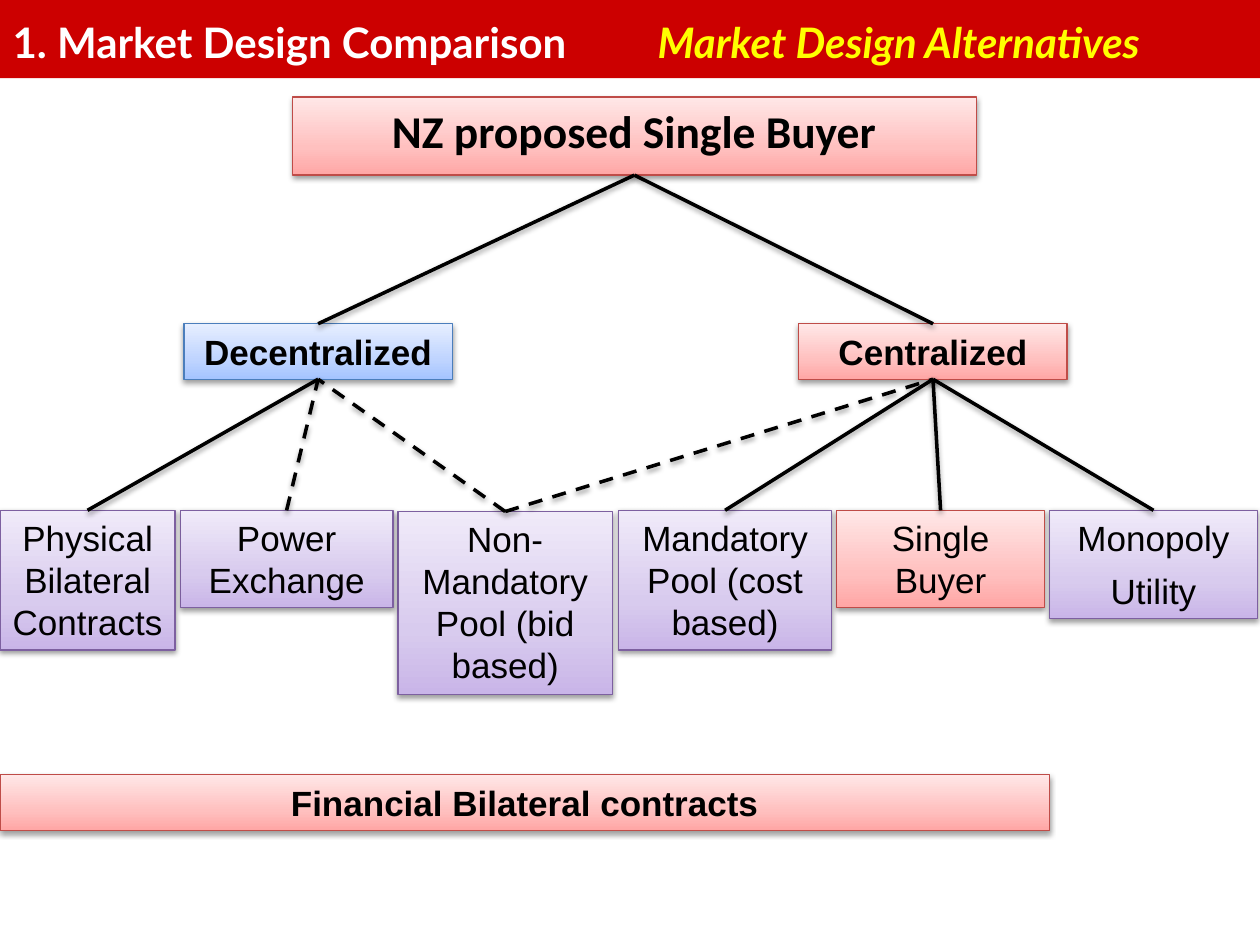
from dataclasses import dataclass

from lxml import etree
from pptx import Presentation
from pptx import util as u
from pptx.dml.color import RGBColor
from pptx.enum import dml, shapes, text
from pptx.oxml.ns import qn

BLACK = RGBColor(0x00, 0x00, 0x00)
WHITE = RGBColor(0xFF, 0xFF, 0xFF)
YELLOW = RGBColor(0xFF, 0xFF, 0x00)
HEADER_RED = RGBColor(0xCC, 0x00, 0x00)
TOP, BOTTOM = 0, 2  # connection sites of a rectangle


@dataclass(frozen=True)
class Theme:
    line: RGBColor
    stops: tuple[RGBColor, RGBColor, RGBColor]  # from bottom to top


RED = Theme(RGBColor(0xBF, 0x4C, 0x48), (
    RGBColor(0xFF, 0xA6, 0xA5), RGBColor(0xFF, 0xC0, 0xBF), RGBColor(0xFF, 0xE7, 0xE7)))
BLUE = Theme(RGBColor(0x4B, 0x7E, 0xBC), (
    RGBColor(0xA4, 0xC4, 0xFF), RGBColor(0xBF, 0xD4, 0xFF), RGBColor(0xE6, 0xEE, 0xFF)))
PURPLE = Theme(RGBColor(0x7D, 0x60, 0xA0), (
    RGBColor(0xC9, 0xB5, 0xE8), RGBColor(0xD8, 0xCB, 0xEE), RGBColor(0xF0, 0xEA, 0xF9)))


@dataclass(frozen=True)
class Box:
    name: str
    paragraphs: tuple[str, ...]
    left: float
    top: float
    width: float
    height: float
    theme: Theme = PURPLE
    bold: bool = False
    font: str = "Arial"
    size: int = 20
    space_before: int = 6


@dataclass(frozen=True)
class Branch:
    parent: str
    child: str
    dashed: bool = False


BOXES = [
    Box("proposal", ("NZ proposed Single Buyer",), 2.32, 0.77, 5.43, 0.62, RED, True,
        "Calibri", 26, 0),
    Box("decentralized", ("Decentralized",), 1.46, 2.57, 2.13, 0.44, BLUE, True),
    Box("centralized", ("Centralized",), 6.34, 2.57, 2.13, 0.44, RED, True),
    Box("monopoly", ("Monopoly", "Utility"), 8.33, 4.05, 1.65, 0.86),
    Box("single buyer", ("Single\nBuyer",), 6.64, 4.05, 1.65, 0.77, RED),
    Box("mandatory", ("Mandatory\nPool (cost based)",), 4.91, 4.05, 1.69, 1.11),
    Box("voluntary", ("Non- Mandatory\nPool (bid based)",), 3.16, 4.06, 1.7, 1.45),
    Box("exchange", ("Power\nExchange",), 1.43, 4.05, 1.69, 0.77),
    Box("physical", ("Physical\nBilateral\nContracts",), 0, 4.05, 1.39, 1.11),
    Box("financial", ("Financial Bilateral contracts",), 0, 6.15, 8.33, 0.44, RED, True),
]

BRANCHES = [
    Branch("proposal", "decentralized"),
    Branch("proposal", "centralized"),
    Branch("centralized", "monopoly"),
    Branch("centralized", "single buyer"),
    Branch("centralized", "mandatory"),
    Branch("centralized", "voluntary", True),
    Branch("decentralized", "voluntary", True),
    Branch("decentralized", "exchange", True),
    Branch("decentralized", "physical"),
]


def apply_format(target, values: dict) -> None:
    for attribute, value in values.items():
        setattr(target, attribute, value)


def add_node(parent, tag: str, **attributes):
    return etree.SubElement(parent, qn(tag), {k: str(v) for k, v in attributes.items()})


def add_shadow(shape) -> None:
    """Soft shadow below the shape; call after the line is set."""
    effects = add_node(shape._element.spPr, "a:effectLst")
    shadow = add_node(effects, "a:outerShdw", blurRad=40000, dist=20000,
                      dir=5400000, rotWithShape=0)
    color = add_node(shadow, "a:srgbClr", val=BLACK)
    add_node(color, "a:alpha", val=38000)


def fill_gradient(shape, theme: Theme) -> None:
    shape.fill.gradient()
    gradient = shape._element.spPr.find(qn("a:gradFill"))
    for child in list(gradient):
        gradient.remove(child)
    stops = add_node(gradient, "a:gsLst")
    for position, color in zip((0, 35, 100), theme.stops):
        add_node(add_node(stops, "a:gs", pos=position * 1000), "a:srgbClr", val=color)
    add_node(gradient, "a:lin", ang=270 * 60000, scaled=0)


def add_box(slide, box: Box):
    shape = slide.shapes.add_shape(
        shapes.MSO_SHAPE.RECTANGLE,
        *map(u.Inches, (box.left, box.top, box.width, box.height)))
    fill_gradient(shape, box.theme)
    shape.line.color.rgb = box.theme.line
    shape.line.width = u.Pt(0.75)
    add_shadow(shape)

    frame = shape.text_frame
    apply_format(frame, {"word_wrap": True, "vertical_anchor": text.MSO_ANCHOR.TOP,
                         "margin_left": u.Inches(0.08), "margin_right": u.Inches(0.08)})
    for index, wording in enumerate(box.paragraphs):
        paragraph = frame.add_paragraph() if index else frame.paragraphs[0]
        paragraph.text = wording.replace("\n", "\v")
        apply_format(paragraph, {"alignment": text.PP_ALIGN.CENTER,
                                 "space_before": u.Pt(box.space_before)})
        for run in paragraph.runs:
            apply_format(run.font, {"name": box.font, "size": u.Pt(box.size),
                                    "bold": box.bold})
            run.font.color.rgb = BLACK
    return shape


def add_branch(slide, parent, child, dashed: bool) -> None:
    connector = slide.shapes.add_connector(shapes.MSO_CONNECTOR.STRAIGHT, 0, 0, 0, 0)
    connector.begin_connect(child, TOP)
    connector.end_connect(parent, BOTTOM)
    connector.line.color.rgb = BLACK
    connector.line.width = u.Pt(2)
    if dashed:
        connector.line.dash_style = dml.MSO_LINE.DASH
    add_shadow(connector)


def add_header(slide) -> None:
    band = slide.shapes.add_shape(shapes.MSO_SHAPE.RECTANGLE, 0, 0,
                                  u.Inches(10), u.Inches(0.62))
    band.shadow.inherit = False
    band.fill.solid()
    band.fill.fore_color.rgb = HEADER_RED
    band.line.fill.background()

    title = slide.shapes.title
    band._element.addnext(title._element)  # title in front of the band
    apply_format(title, {"left": 0, "top": u.Inches(0.08),
                         "width": u.Inches(10), "height": u.Inches(0.5)})
    apply_format(title.text_frame, {"word_wrap": True,
                                    "auto_size": text.MSO_AUTO_SIZE.NONE,
                                    "vertical_anchor": text.MSO_ANCHOR.TOP})
    paragraph = title.text_frame.paragraphs[0]
    paragraph.alignment = text.PP_ALIGN.LEFT
    tabs = add_node(paragraph._p.get_or_add_pPr(), "a:tabLst")
    add_node(tabs, "a:tab", pos=u.Inches(5.12), algn="l")
    for wording, color, italic in (("1. Market Design Comparison\t", WHITE, False),
                                   ("Market Design Alternatives", YELLOW, True)):
        run = paragraph.add_run()
        run.text = wording
        apply_format(run.font, {"name": "Lato", "size": u.Pt(24),
                                "bold": True, "italic": italic})
        run.font.color.rgb = color


def main() -> None:
    presentation = Presentation()
    presentation.slide_width = u.Inches(10)
    presentation.slide_height = u.Inches(7.5)
    slide = presentation.slides.add_slide(presentation.slide_layouts[5])

    # Header, then the tree of market designs
    add_header(slide)
    placed = {box.name: add_box(slide, box) for box in BOXES}
    for branch in BRANCHES:
        add_branch(slide, placed[branch.parent], placed[branch.child], branch.dashed)

    presentation.save("out.pptx")


if __name__ == "__main__":
    main()
